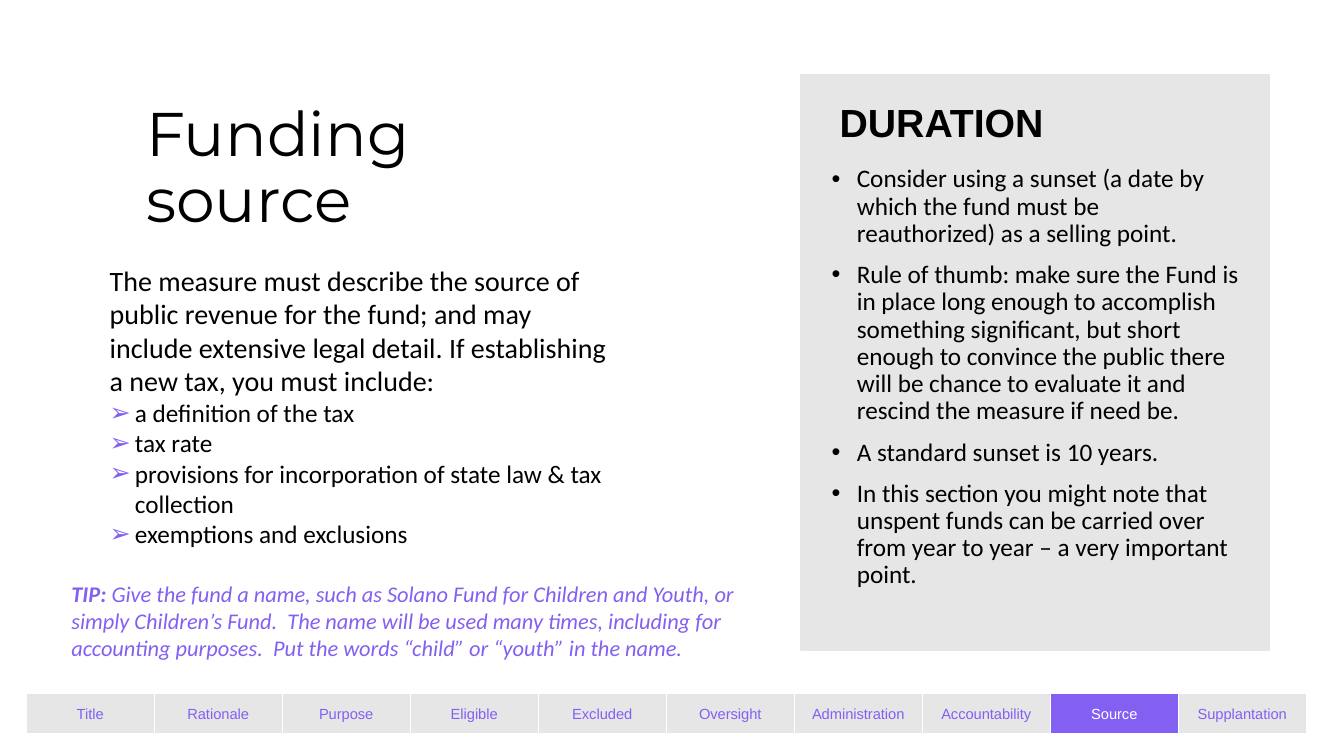
"""Build the funding source slide with its duration panel and section bar."""
from lxml.etree import SubElement
from pptx import Presentation
from pptx.dml.color import RGBColor
from pptx.enum.shapes import MSO_SHAPE
from pptx.enum.text import MSO_ANCHOR, PP_ALIGN
from pptx.oxml.ns import qn
from pptx.util import Pt

PX = 9144
THEME = {
    "black": "000000", "white": "FFFFFF", "violet": "8360F2", "grey": "E7E6E6",
    "title": 44, "heading": 28, "lead": 20, "list": 18, "tip": 16, "tab": 10.5,
    "display": "Montserrat", "sans": "Arial", "body": "Calibri",
}


def add_span(para, text, size, font, color="black", bold=False, italic=False):
    """Append one formatted run to a paragraph."""
    span = para.add_run()
    span.text = text
    span.font.size = Pt(THEME[size])
    span.font.name = THEME[font]
    span.font.color.rgb = RGBColor.from_string(THEME[color])
    span.font.bold = bold
    span.font.italic = italic


def add_bullet(para, symbol, color):
    """Give a paragraph a hanging, coloured bullet."""
    properties = para._p.get_or_add_pPr()
    properties.set("marL", str(25 * PX))
    properties.set("indent", str(-25 * PX))
    bullet_color = SubElement(properties, qn("a:buClr"))
    SubElement(bullet_color, qn("a:srgbClr"), val=THEME[color])
    SubElement(properties, qn("a:buFont"), typeface=THEME["sans"])
    SubElement(properties, qn("a:buChar"), char=symbol)


deck = Presentation()
deck.slide_width, deck.slide_height = 1333 * PX, 750 * PX
page = deck.slides.add_slide(deck.slide_layouts[6])

panel = page.shapes.add_shape(MSO_SHAPE.RECTANGLE, 794 * PX, 74 * PX, 465 * PX, 571 * PX)
panel.shadow.inherit = False
panel.fill.solid()
panel.fill.fore_color.rgb = RGBColor.from_string(THEME["grey"])
panel.line.color.rgb = RGBColor.from_string(THEME["grey"])
panel.line.width = Pt(1)

FRAMES = {
    "title": (135, 80, 481, 176),
    "measure": (99, 256, 517, 289),
    "heading": (823, 93, 436, 63),
    "duration": (815, 160, 424, 410),
    "tip": (61, 571, 694, 91),
}
frames = {}
for name, bounds in FRAMES.items():
    box = page.shapes.add_textbox(*(length * PX for length in bounds))
    frames[name] = box.text_frame
    frames[name].word_wrap = True

frames["title"].vertical_anchor = MSO_ANCHOR.MIDDLE
title = frames["title"].paragraphs[0]
title.line_spacing = 0.9
add_span(title, "Funding source", "title", "display")

add_span(
    frames["measure"].paragraphs[0],
    "The measure must describe the source of public revenue for the fund; and may "
    "include extensive legal detail. If establishing a new tax, you must include:",
    "lead", "body",
)
for requirement in (
    "a definition of the tax",
    "tax rate",
    "provisions for incorporation of state law & tax collection",
    "exemptions and exclusions",
):
    para = frames["measure"].add_paragraph()
    add_bullet(para, "➢", "violet")
    add_span(para, requirement, "list", "body")

add_span(frames["heading"].paragraphs[0], "DURATION", "heading", "sans", bold=True)

advice = (
    "Consider using a sunset (a date by which the fund must be reauthorized) as a selling point.",
    "Rule of thumb: make sure the Fund is in place long enough to accomplish something "
    "significant, but short enough to convince the public there will be chance to evaluate "
    "it and rescind the measure if need be.",
    "A standard sunset is 10 years.",
    "In this section you might note that unspent funds can be carried over from year to "
    "year – a very important point.",
)
for index, point in enumerate(advice):
    para = frames["duration"].add_paragraph() if index else frames["duration"].paragraphs[0]
    add_bullet(para, "•", "black")
    para.line_spacing = 0.9
    para.space_before = Pt(10 if index else 0)
    add_span(para, point, "list", "body")

tip = frames["tip"].paragraphs[0]
add_span(tip, "TIP: ", "tip", "body", "violet", bold=True, italic=True)
add_span(
    tip,
    "Give the fund a name, such as Solano Fund for Children and Youth, or simply "
    "Children’s Fund.  The name will be used many times, including for accounting "
    "purposes.  Put the words “child” or “youth” in the name.",
    "tip", "body", "violet", italic=True,
)

sections = (
    "Title", "Rationale", "Purpose", "Eligible", "Excluded",
    "Oversight", "Administration", "Accountability", "Source", "Supplantation",
)
current = "Source"
bar = page.shapes.add_table(1, len(sections), 26 * PX, 688 * PX, 1270 * PX, 41 * PX).table
bar.first_row = False
bar.horz_banding = False
for cell, section in zip(bar.rows[0].cells, sections):
    cell.vertical_anchor = MSO_ANCHOR.MIDDLE
    para = cell.text_frame.paragraphs[0]
    para.alignment = PP_ALIGN.CENTER
    add_span(para, section, "tab", "sans", "white" if section == current else "violet")
    properties = cell._tc.get_or_add_tcPr()
    for side, width in (("lnL", 1), ("lnR", 1), ("lnT", 1), ("lnB", 3)):
        border = SubElement(properties, qn(f"a:{side}"), w=str(Pt(width)))
        border_fill = SubElement(border, qn("a:solidFill"))
        SubElement(border_fill, qn("a:srgbClr"), val=THEME["white"])
    cell.fill.solid()
    cell.fill.fore_color.rgb = RGBColor.from_string(THEME["violet" if section == current else "grey"])

deck.save("out.pptx")
